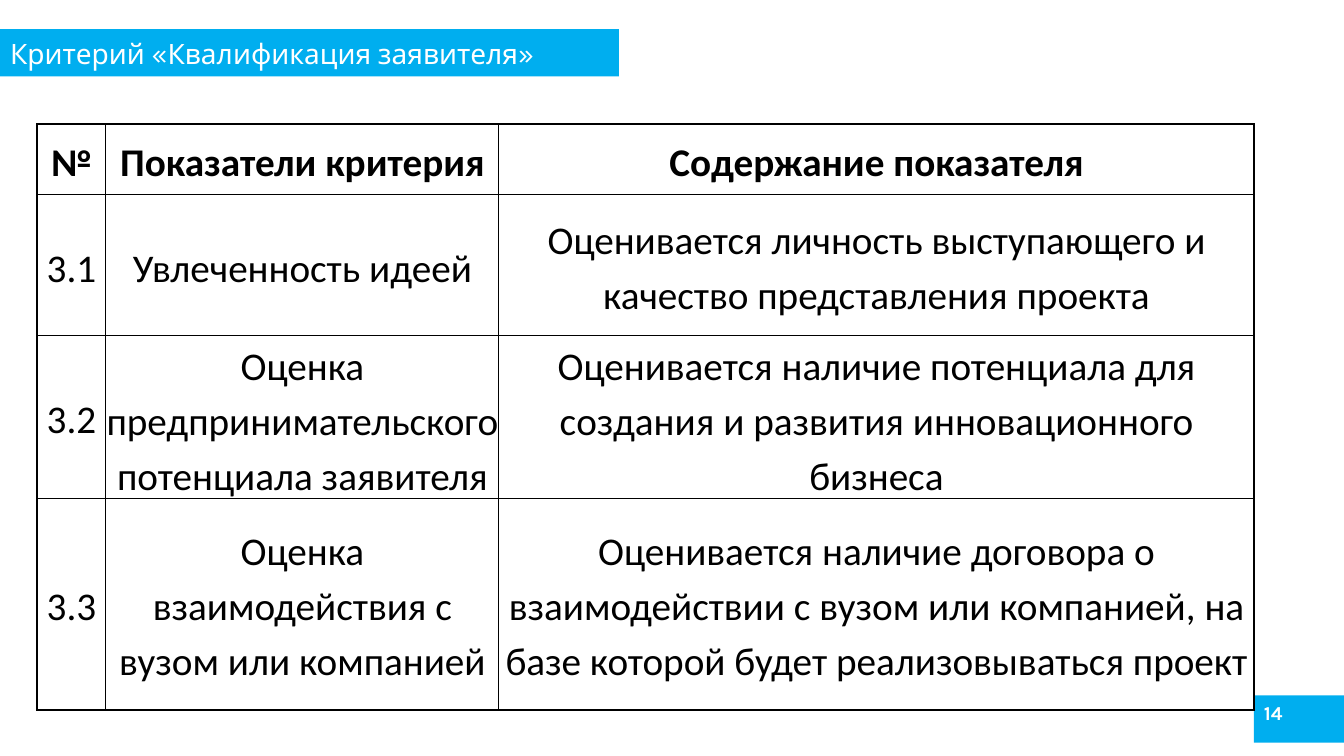
import pptx
import pptx.dml.color
import pptx.enum.shapes
import pptx.enum.text
import pptx.oxml
import pptx.oxml.ns
import pptx.util

Pt = pptx.util.Pt
RGBColor = pptx.dml.color.RGBColor
MIDDLE = pptx.enum.text.MSO_ANCHOR.MIDDLE

CYAN = RGBColor(0x00, 0xAE, 0xEF)
WHITE = RGBColor(0xFF, 0xFF, 0xFF)
BLACK = RGBColor(0x00, 0x00, 0x00)

OUTER_LINE, INNER_LINE = Pt(1.5), Pt(0.75)
COLUMN_WIDTHS = [49, 280.8, 539.3]
ROW_UNIT = 50.4
ROW_UNITS = [1, 2, 2, 3]
CRITERIA = [
    ("№", "Показатели критерия", "Содержание показателя"),
    ("3.1", "Увлеченность идеей",
     "Оценивается личность выступающего и качество представления проекта"),
    ("3.2", "Оценка предпринимательского потенциала заявителя",
     "Оценивается наличие потенциала для создания и развития инновационного бизнеса"),
    ("3.3", "Оценка взаимодействия с вузом или компанией",
     "Оценивается наличие договора о взаимодействии с вузом или компанией, "
     "на базе которой будет реализовываться проект"),
]


def add_run(paragraph, text, font_name, size, color, bold=False):
    run = paragraph.add_run()
    run.text = text
    run.font.name = font_name
    run.font.size = Pt(size)
    run.font.bold = bold
    run.font.color.rgb = color


def set_borders(cell, widths):
    """Draw the left, right, top and bottom borders, given in that order."""
    properties = cell._tc.get_or_add_tcPr()
    for position, (side, width) in enumerate(zip("LRTB", widths)):
        border = pptx.oxml.parse_xml(
            f'<a:ln{side} {pptx.oxml.ns.nsdecls("a")} w="{width}">'
            f'<a:solidFill><a:srgbClr val="{BLACK}"/></a:solidFill></a:ln{side}>')
        properties.insert(position, border)


presentation = pptx.Presentation()
presentation.slide_width = Pt(960)
presentation.slide_height = Pt(540)
slide = presentation.slides.add_slide(presentation.slide_layouts[5])

# Cyan bands behind the heading and the page number
for left, top, width in [(0, 20.9, 442), (895.7, 496.8, 64.3)]:
    band = slide.shapes.add_shape(
        pptx.enum.shapes.MSO_SHAPE.RECTANGLE, Pt(left), Pt(top), Pt(width), Pt(33.8))
    band.shadow.inherit = False
    band.fill.solid()
    band.fill.fore_color.rgb = CYAN
    band.line.fill.background()
    slide.shapes._spTree.insert(2, band._element)

heading = slide.shapes.title
heading.left, heading.top, heading.width, heading.height = Pt(0), Pt(20.9), Pt(440.6), Pt(33.8)
heading.text_frame.vertical_anchor = MIDDLE
heading.text_frame.auto_size = pptx.enum.text.MSO_AUTO_SIZE.NONE
heading.text_frame.paragraphs[0].alignment = pptx.enum.text.PP_ALIGN.LEFT
add_run(heading.text_frame.paragraphs[0], "Критерий «Квалификация заявителя»", "Karla", 20, WHITE)

page_number = slide.shapes.add_textbox(Pt(895.7), Pt(496.8), Pt(60.5), Pt(33.8))
page_number.text_frame.word_wrap = True
add_run(page_number.text_frame.paragraphs[0], "14", "Karla", 14, WHITE, bold=True)

criteria_table = slide.shapes.add_table(
    len(CRITERIA), len(COLUMN_WIDTHS), Pt(26.6), Pt(88.6),
    Pt(sum(COLUMN_WIDTHS)), Pt(ROW_UNIT * sum(ROW_UNITS))).table
criteria_table.first_row = False
criteria_table.horz_banding = False
for column, width in zip(criteria_table.columns, COLUMN_WIDTHS):
    column.width = Pt(width)
for row, units in zip(criteria_table.rows, ROW_UNITS):
    row.height = Pt(ROW_UNIT * units)

last_row, last_column = len(CRITERIA) - 1, len(COLUMN_WIDTHS) - 1
for row_index, entries in enumerate(CRITERIA):
    for column_index, entry in enumerate(entries):
        cell = criteria_table.cell(row_index, column_index)
        cell.fill.background()
        cell.vertical_anchor = MIDDLE
        cell.margin_left = cell.margin_right = cell.margin_top = cell.margin_bottom = 0
        on_edge = (column_index == 0, column_index == last_column,
                   row_index == 0, row_index == last_row)
        set_borders(cell, [OUTER_LINE if edge else INNER_LINE for edge in on_edge])
        paragraph = cell.text_frame.paragraphs[0]
        paragraph.alignment = pptx.enum.text.PP_ALIGN.CENTER
        paragraph.line_spacing = 1.15
        add_run(paragraph, entry, "Calibri", 28, BLACK, bold=row_index == 0)

presentation.save("out.pptx")
